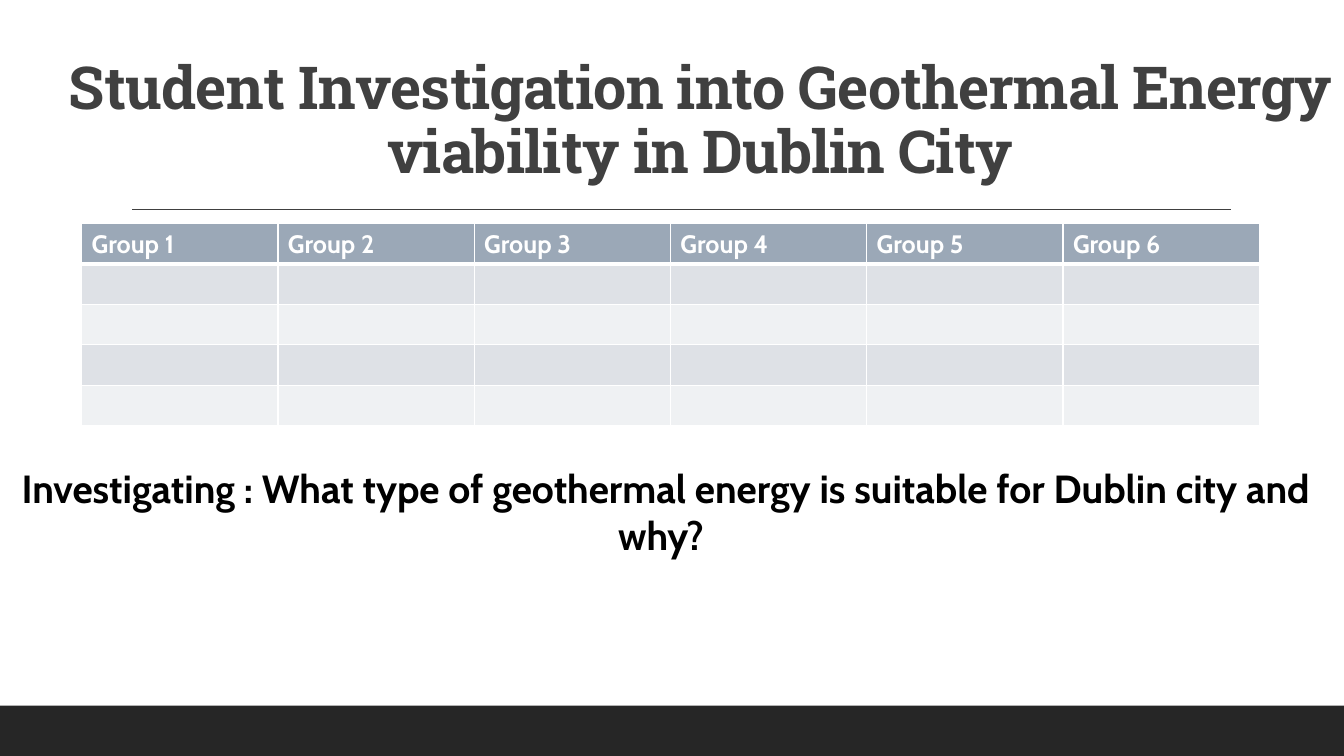
from lxml.etree import SubElement
from pptx import Presentation
from pptx.dml.color import RGBColor
from pptx.enum.shapes import MSO_CONNECTOR, MSO_SHAPE
from pptx.enum.text import MSO_ANCHOR, PP_ALIGN
from pptx.oxml import parse_xml
from pptx.oxml.ns import nsdecls, qn
from pptx.util import Emu, Pt

PX = 9144  # 100 px to the inch
THEME = {
    "title_font": "Roboto Slab", "body_font": "Cabin",
    "title_size": 42.3, "question_size": 28, "table_size": 18,
    "ink": "404040", "black": "000000", "white": "FFFFFF", "footer": "262626",
    "header": "9BA8B7", "bands": ["DEE1E6", "EFF1F3"],
}


def write(frame, text, font, size, color, align=PP_ALIGN.LEFT, line_spacing=None, tracking=None):
    para = frame.paragraphs[0]
    para.alignment = align
    para.line_spacing = line_spacing
    span = para.add_run()
    span.text = text
    span.font.name = font
    span.font.size = Pt(size)
    span.font.bold = True
    span.font.color.rgb = RGBColor.from_string(color)
    if tracking is not None:
        span.font._element.set("spc", str(tracking))


def paint_cell(cell, fill, bottom_width):
    cell.fill.solid()
    cell.fill.fore_color.rgb = RGBColor.from_string(fill)
    properties = cell._tc.get_or_add_tcPr()
    widths = {"lnL": 1, "lnR": 1, "lnT": 1, "lnB": bottom_width}
    for index, (side, width) in enumerate(widths.items()):
        border = parse_xml(
            f'<a:{side} {nsdecls("a")} w="{Pt(width)}"><a:solidFill>'
            f'<a:srgbClr val="{THEME["white"]}"/></a:solidFill></a:{side}>')
        properties.insert(index, border)


deck = Presentation()
deck.slide_width, deck.slide_height = Emu(1333 * PX), Emu(750 * PX)
page = deck.slides.add_slide(deck.slide_layouts[6])

# Footer band
footer = page.shapes.add_shape(MSO_SHAPE.RECTANGLE, 0, 700 * PX, 1333 * PX, 50 * PX)
footer.shadow.inherit = False
footer.fill.solid()
footer.fill.fore_color.rgb = RGBColor.from_string(THEME["footer"])
footer.line.fill.background()

# Rule under the title
rule = page.shapes.add_connector(
    MSO_CONNECTOR.STRAIGHT, 131 * PX, 208 * PX, 1221 * PX, 208 * PX)
rule.line.color.rgb = RGBColor.from_string(THEME["ink"])
rule.line.width = Pt(1)
SubElement(rule._element.spPr, qn("a:effectLst"))

# Title
title = page.shapes.add_textbox(56 * PX, 31 * PX, 1277 * PX, 159 * PX).text_frame
title.word_wrap = True
title.vertical_anchor = MSO_ANCHOR.BOTTOM
write(title, "Student Investigation into Geothermal Energy viability in Dublin City",
      THEME["title_font"], THEME["title_size"], THEME["ink"],
      align=PP_ALIGN.CENTER, line_spacing=0.9, tracking=-50)

# Group table: a header over banded empty rows
ROWS, COLUMNS = 5, 6
table = page.shapes.add_table(
    ROWS, COLUMNS, 81 * PX, 222 * PX, 1168 * PX, ROWS * 40 * PX).table
for row in range(ROWS):
    for column in range(COLUMNS):
        cell = table.cell(row, column)
        if row == 0:
            paint_cell(cell, THEME["header"], bottom_width=3)
            write(cell.text_frame, f"Group {column + 1}",
                  THEME["body_font"], THEME["table_size"], THEME["white"])
        else:
            paint_cell(cell, THEME["bands"][(row - 1) % 2], bottom_width=1)

# Question
question = page.shapes.add_textbox(0, 456 * PX, 1320 * PX, 151 * PX).text_frame
question.word_wrap = True
write(question,
      "Investigating : What type of geothermal energy is suitable for Dublin city and why? ",
      THEME["body_font"], THEME["question_size"], THEME["black"], align=PP_ALIGN.CENTER)

deck.save("out.pptx")
